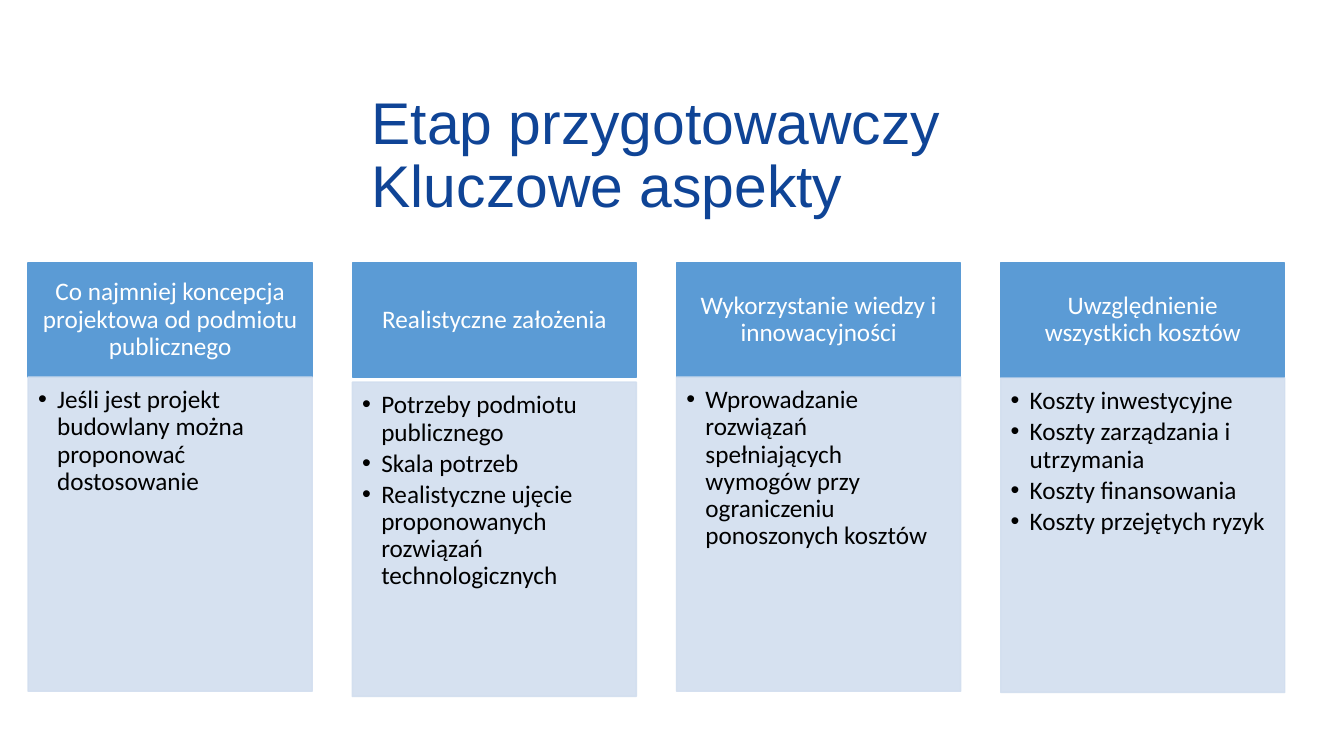
from lxml.etree import SubElement
from pptx import Presentation
from pptx.dml.color import RGBColor
from pptx.enum.shapes import MSO_SHAPE as Shape
from pptx.enum.text import MSO_ANCHOR as Anchor, PP_ALIGN as Align
from pptx.oxml.ns import qn
from pptx.util import Cm, Pt

NAVY = RGBColor(0x0F, 0x44, 0x96)
BLUE = RGBColor(0x5B, 0x9B, 0xD5)
PALE = RGBColor(0xD2, 0xDE, 0xEF)
WHITE = RGBColor(0xFF, 0xFF, 0xFF)
BLACK = RGBColor(0x00, 0x00, 0x00)

LEFT, PITCH, WIDTH = 0.71, 8.17, 7.16
HEADER_TOP, HEADER_HEIGHT, BODY_HEIGHT = 6.63, 2.87, 7.92

# Heading, top of the body in cm, bullet points
COLUMNS = [
    ("Co najmniej koncepcja projektowa od podmiotu publicznego", 9.5,
     ["Jeśli jest projekt budowlany można proponować dostosowanie"]),
    ("Realistyczne założenia", 9.63,
     ["Potrzeby podmiotu publicznego",
      "Skala potrzeb",
      "Realistyczne ujęcie proponowanych rozwiązań technologicznych"]),
    ("Wykorzystanie wiedzy i innowacyjności", 9.5,
     ["Wprowadzanie rozwiązań spełniających wymogów przy "
      "ograniczeniu ponoszonych kosztów"]),
    ("Uwzględnienie wszystkich kosztów", 9.53,
     ["Koszty inwestycyjne",
      "Koszty zarządzania i utrzymania",
      "Koszty finansowania",
      "Koszty przejętych ryzyk"]),
]


def write(para, text, size=18, font="Calibri", color=BLACK, align=Align.LEFT, bullet=False):
    """Fill a paragraph; a newline in the text becomes a line break."""
    para.text = text
    para.alignment = align
    para.line_spacing = 0.9
    if bullet:
        para.space_after = Pt(2.7)
        props = para._p.get_or_add_pPr()
        props.set("marL", str(Cm(0.48)))
        props.set("indent", str(-Cm(0.48)))
        SubElement(props, qn("a:buFont"), typeface="Arial")
        SubElement(props, qn("a:buChar"), char="•")
    for span in para.runs:
        span.font.size = Pt(size)
        span.font.name = font
        span.font.color.rgb = color


def add_panel(left, top, height, color, anchor, margins, opacity=100):
    """Add a filled rectangle and return its text frame."""
    box = page.shapes.add_shape(Shape.RECTANGLE, Cm(left), Cm(top), Cm(WIDTH), Cm(height))
    box.shadow.inherit = False
    box.fill.solid()
    box.fill.fore_color.rgb = color
    box.line.color.rgb = color
    box.line.width = Pt(1)
    if opacity < 100:
        for tint in box._element.spPr.iter(qn("a:srgbClr")):
            SubElement(tint, qn("a:alpha"), val=str(opacity * 1000))
    frame = box.text_frame
    frame.word_wrap = True
    frame.vertical_anchor = anchor
    frame.margin_left, frame.margin_top, frame.margin_right, frame.margin_bottom = map(Cm, margins)
    return frame


deck = Presentation()
deck.slide_width, deck.slide_height = Cm(33.87), Cm(19.05)
page = deck.slides.add_slide(deck.slide_layouts[6])

title = page.shapes.add_textbox(Cm(9.12), Cm(3.2), Cm(22.63), Cm(1.5)).text_frame
title.word_wrap = True
title.vertical_anchor = Anchor.MIDDLE
write(title.paragraphs[0], "Etap przygotowawczy\nKluczowe aspekty", size=42, font="Arial", color=NAVY)

for index, (heading, body_top, points) in enumerate(COLUMNS):
    left = LEFT + index * PITCH
    header = add_panel(left, HEADER_TOP, HEADER_HEIGHT, BLUE, Anchor.MIDDLE, (0.36, 0.2, 0.36, 0.2))
    write(header.paragraphs[0], heading, color=WHITE, align=Align.CENTER)

    body = add_panel(left, body_top, BODY_HEIGHT, PALE, Anchor.TOP, (0.25, 0.25, 0.36, 0.41), opacity=90)
    for number, point in enumerate(points):
        para = body.add_paragraph() if number else body.paragraphs[0]
        write(para, point, bullet=True)

deck.save("out.pptx")
